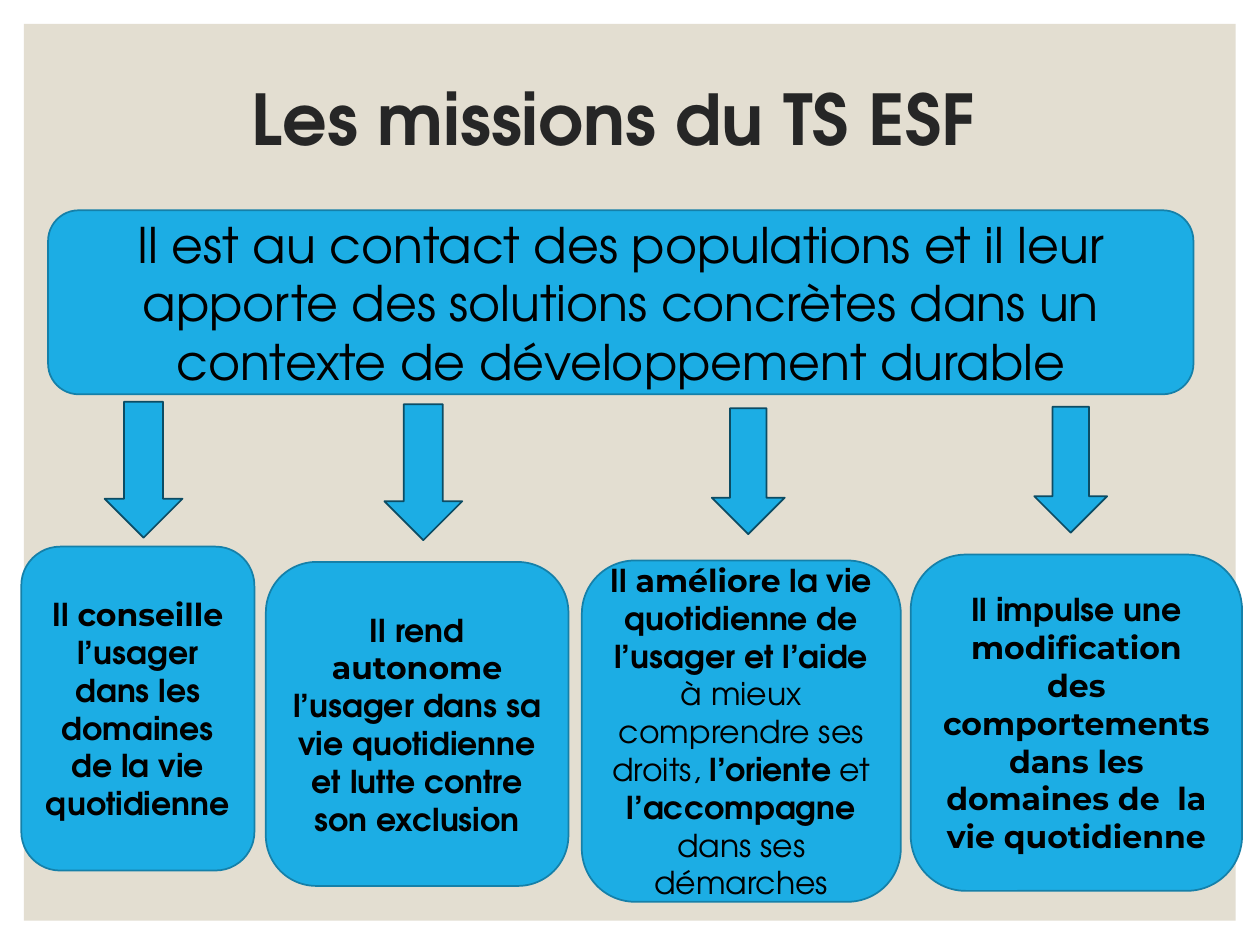
from pptx import Presentation
from pptx.dml.color import RGBColor
from pptx.enum.shapes import MSO_SHAPE
from pptx.enum.text import MSO_ANCHOR, PP_ALIGN
from pptx.util import Cm, Pt

RECTANGLE = MSO_SHAPE.RECTANGLE
ROUNDED = MSO_SHAPE.ROUNDED_RECTANGLE
DOWN_ARROW = MSO_SHAPE.DOWN_ARROW
MIDDLE = MSO_ANCHOR.MIDDLE
LEFT, CENTER = PP_ALIGN.LEFT, PP_ALIGN.CENTER

BEIGE = RGBColor(0xE3, 0xDE, 0xD1)
BLUE = RGBColor(0x1C, 0xAD, 0xE4)
BOX_LINE = RGBColor(0x15, 0x80, 0xA9)
ARROW_LINE = RGBColor(0x0C, 0x4C, 0x64)
DARK = RGBColor(0x26, 0x26, 0x26)
BLACK = RGBColor(0, 0, 0)

ADVENTOR = "TeX Gyre Adventor"
MONTSERRAT = "Montserrat"

# Each run is (text, font, bold)
TITLE = [("Les missions du TS ESF", ADVENTOR, True)]
INTRODUCTION = [(
    "Il est au contact des populations et il leur apporte des solutions "
    "concrètes dans un contexte de développement durable", ADVENTOR, False)]

# Each mission: arrow position, box position, runs
MISSIONS = [
    ((2.11, 8.1, 1.57, 2.74), (0.43, 11.02, 4.7, 6.53), [
        ("Il ", ADVENTOR, True),
        ("conseille", MONTSERRAT, True),
        (" l’usager dans les domaines de la vie quotidienne", ADVENTOR, True)]),
    ((7.75, 8.15, 1.57, 2.74), (5.36, 11.33, 6.1, 6.53), [
        ("Il rend ", ADVENTOR, True),
        ("autonome", MONTSERRAT, True),
        (" l’usager dans sa vie quotidienne et lutte contre son exclusion",
         ADVENTOR, True)]),
    ((14.35, 8.23, 1.47, 2.54), (11.73, 11.3, 6.43, 6.88), [
        ("Il ", ADVENTOR, True),
        ("améliore", MONTSERRAT, True),
        (" la vie quotidienne de l’usager et l’aide ", ADVENTOR, True),
        ("à mieux comprendre ses droits, ", ADVENTOR, False),
        ("l’oriente", ADVENTOR, True),
        (" et ", ADVENTOR, False),
        ("l’accompagne", ADVENTOR, True),
        (" dans ses démarches", ADVENTOR, False)]),
    ((20.85, 8.2, 1.47, 2.54), (18.36, 11.18, 6.68, 6.78), [
        ("Il impulse une ", ADVENTOR, True),
        ("modification des comportements dans les domaines de  la vie "
         "quotidienne", MONTSERRAT, True)]),
]


def write_text(shape, runs, size, color=BLACK, align=CENTER, line_spacing=None):
    frame = shape.text_frame
    frame.word_wrap = True
    frame.vertical_anchor = MIDDLE
    paragraph = frame.paragraphs[0]
    paragraph.alignment = align
    paragraph.line_spacing = line_spacing
    for text, font_name, bold in runs:
        run = paragraph.add_run()
        run.text = text
        run.font.name = font_name
        run.font.size = Pt(size)
        run.font.bold = bold
        run.font.color.rgb = color


def add_filled_shape(slide, kind, position, fill, line=None):
    shape = slide.shapes.add_shape(kind, *map(Cm, position))
    shape.shadow.inherit = False
    shape.fill.solid()
    shape.fill.fore_color.rgb = fill
    if line is None:
        shape.line.fill.background()
    else:
        shape.line.color.rgb = line
        shape.line.width = Pt(1)
    return shape


def add_text_card(slide, position, runs, size):
    card = add_filled_shape(slide, ROUNDED, position, BLUE, BOX_LINE)
    write_text(card, runs, size)


def add_title(slide):
    title = slide.shapes.add_textbox(Cm(4.83), Cm(0.53), Cm(19.61), Cm(3.89))
    write_text(title, TITLE, 40, color=DARK, align=LEFT, line_spacing=0.9)


def main():
    presentation = Presentation()
    presentation.slide_width = Cm(25.4)
    presentation.slide_height = Cm(19.05)
    slide = presentation.slides.add_slide(presentation.slide_layouts[6])

    add_filled_shape(slide, RECTANGLE, (0.48, 0.48, 24.43, 18.08), BEIGE)
    add_title(slide)
    add_text_card(slide, (0.97, 4.24, 23.09, 3.71), INTRODUCTION, 28)
    for arrow_position, card_position, runs in MISSIONS:
        add_filled_shape(slide, DOWN_ARROW, arrow_position, BLUE, ARROW_LINE)
        add_text_card(slide, card_position, runs, 18)

    presentation.save("out.pptx")


if __name__ == "__main__":
    main()
